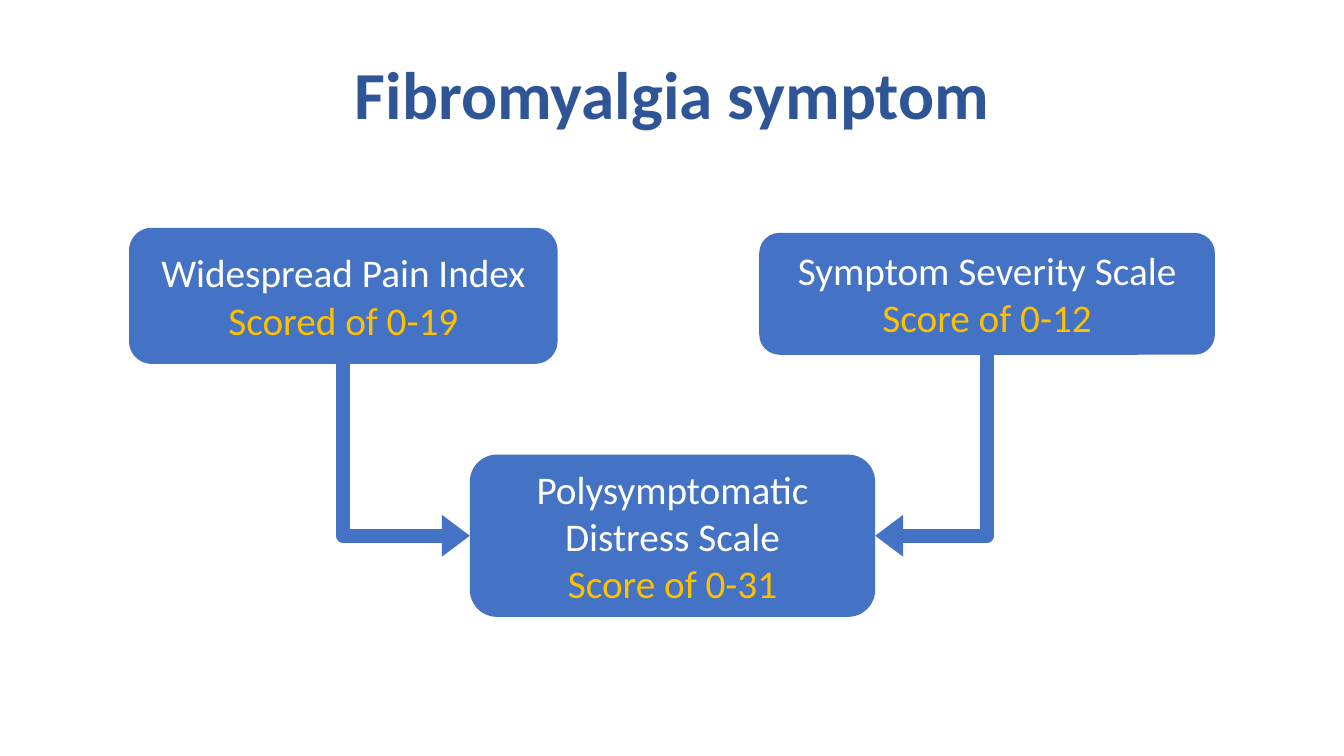
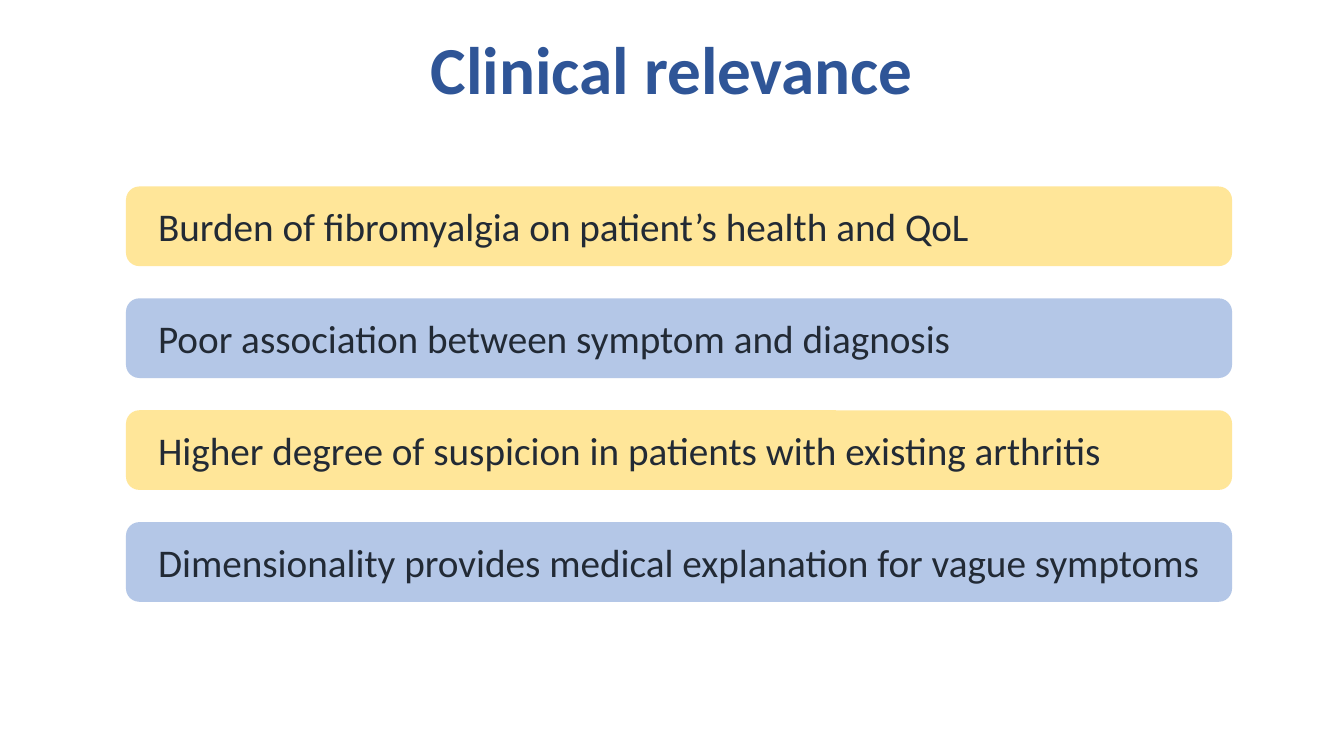
"""Build two slides on fibromyalgia: the symptom scales and their clinical relevance."""
import pptx
import pptx.dml.color
import pptx.enum.shapes
import pptx.enum.text
import pptx.oxml
import pptx.oxml.ns
import pptx.util
from pptx.util import Inches

FONT = "Calibri"
BLUE, TITLE_BLUE, PALE_BLUE = "4472C4", "2F5597", "B4C7E7"
GOLD, PALE_GOLD = "FFC000", "FFE699"
WHITE, DARK = "FFFFFF", "222A35"
CENTER, LEFT = pptx.enum.text.PP_ALIGN.CENTER, pptx.enum.text.PP_ALIGN.LEFT
NAMESPACE = pptx.oxml.ns.nsdecls("a")


def color(value):
    return pptx.dml.color.RGBColor.from_string(value)


def add_text(shape, lines, size, align=CENTER, bold=False):
    frame = shape.text_frame
    frame.word_wrap = True
    frame.vertical_anchor = pptx.enum.text.MSO_ANCHOR.MIDDLE
    frame.text = "\n".join(text for text, _ in lines)
    for paragraph, (_, text_color) in zip(frame.paragraphs, lines):
        paragraph.alignment = align
        paragraph.font.name = FONT
        paragraph.font.size = pptx.util.Pt(size)
        paragraph.font.bold = bold
        paragraph.font.color.rgb = color(text_color)


presentation = pptx.Presentation()
presentation.slide_width, presentation.slide_height = Inches(13.33), Inches(7.5)

slides = []
for title, left, width, height in [
    ("Fibromyalgia symptom", 0.92, 11.5, 1.93),
    ("Clinical relevance", 1.96, 9.41, 1.45),
]:
    slide = presentation.slides.add_slide(presentation.slide_layouts[6])
    title_box = slide.shapes.add_textbox(Inches(left), 0, Inches(width), Inches(height))
    add_text(title_box, [(title, TITLE_BLUE)], 48, bold=True)
    title_box.text_frame.paragraphs[0].line_spacing = 0.9
    slides.append(slide)
scales_slide, relevance_slide = slides

scale_boxes = []
for name, score, left, top, width, height in [
    ("Widespread Pain Index", "Scored of 0-19", 1.28, 2.26, 4.25, 1.35),
    ("Symptom Severity Scale", "Score of 0-12", 7.53, 2.31, 4.52, 1.21),
    ("Polysymptomatic Distress Scale", "Score of 0-31", 4.66, 4.51, 4.02, 1.61),
]:
    box = scales_slide.shapes.add_shape(
        pptx.enum.shapes.MSO_SHAPE.ROUNDED_RECTANGLE,
        Inches(left), Inches(top), Inches(width), Inches(height))
    box.shadow.inherit = False
    box.fill.solid()
    box.fill.fore_color.rgb = color(BLUE)
    box.line.fill.background()
    add_text(box, [(name, WHITE), (score, GOLD)], 28)
    scale_boxes.append(box)
pain_box, severity_box, distress_box = scale_boxes

for source, side, rotation, flip in [(pain_box, 1, 270, "1"), (severity_box, 3, 90, "0")]:
    arrow = scales_slide.shapes.add_connector(
        pptx.enum.shapes.MSO_CONNECTOR.ELBOW, 0, 0, 0, 0)
    arrow.begin_connect(source, 2)
    arrow.end_connect(distress_box, side)
    center_x = (arrow.begin_x + arrow.end_x) // 2
    center_y = (arrow.begin_y + arrow.end_y) // 2
    across, down = abs(arrow.end_x - arrow.begin_x), abs(arrow.end_y - arrow.begin_y)
    arrow.left, arrow.top = center_x - down // 2, center_y - across // 2
    arrow.width, arrow.height = down, across
    properties = arrow._element.spPr
    properties.xfrm.set("rot", str(rotation * 60000))
    properties.xfrm.set("flipH", flip)
    properties.prstGeom.set("prst", "bentConnector2")
    arrow.line.width = pptx.util.Pt(10)
    arrow.line.color.rgb = color(BLUE)
    for tag in ('round', 'tailEnd type="triangle" w="med" len="sm"'):
        properties.ln.append(pptx.oxml.parse_xml(f"<a:{tag.replace(' ', f' {NAMESPACE} ', 1)}/>"
                                                 if " " in tag else f"<a:{tag} {NAMESPACE}/>"))
    properties.append(pptx.oxml.parse_xml(f"<a:effectLst {NAMESPACE}/>"))

for index, point in enumerate([
    "Burden of fibromyalgia on patient’s health and QoL",
    "Poor association between symptom and diagnosis",
    "Higher degree of suspicion in patients with existing arthritis",
    "Dimensionality provides medical explanation for vague symptoms",
]):
    bar = relevance_slide.shapes.add_shape(
        pptx.enum.shapes.MSO_SHAPE.ROUNDED_RECTANGLE,
        Inches(1.25), Inches(1.85 + index * 1.11), Inches(10.97), Inches(0.79))
    bar.shadow.inherit = False
    bar.fill.solid()
    bar.fill.fore_color.rgb = color((PALE_GOLD, PALE_BLUE)[index % 2])
    bar.line.fill.background()
    bar.text_frame.margin_left = Inches(0.28)
    add_text(bar, [(point, DARK)], 28, align=LEFT)

presentation.save("out.pptx")
